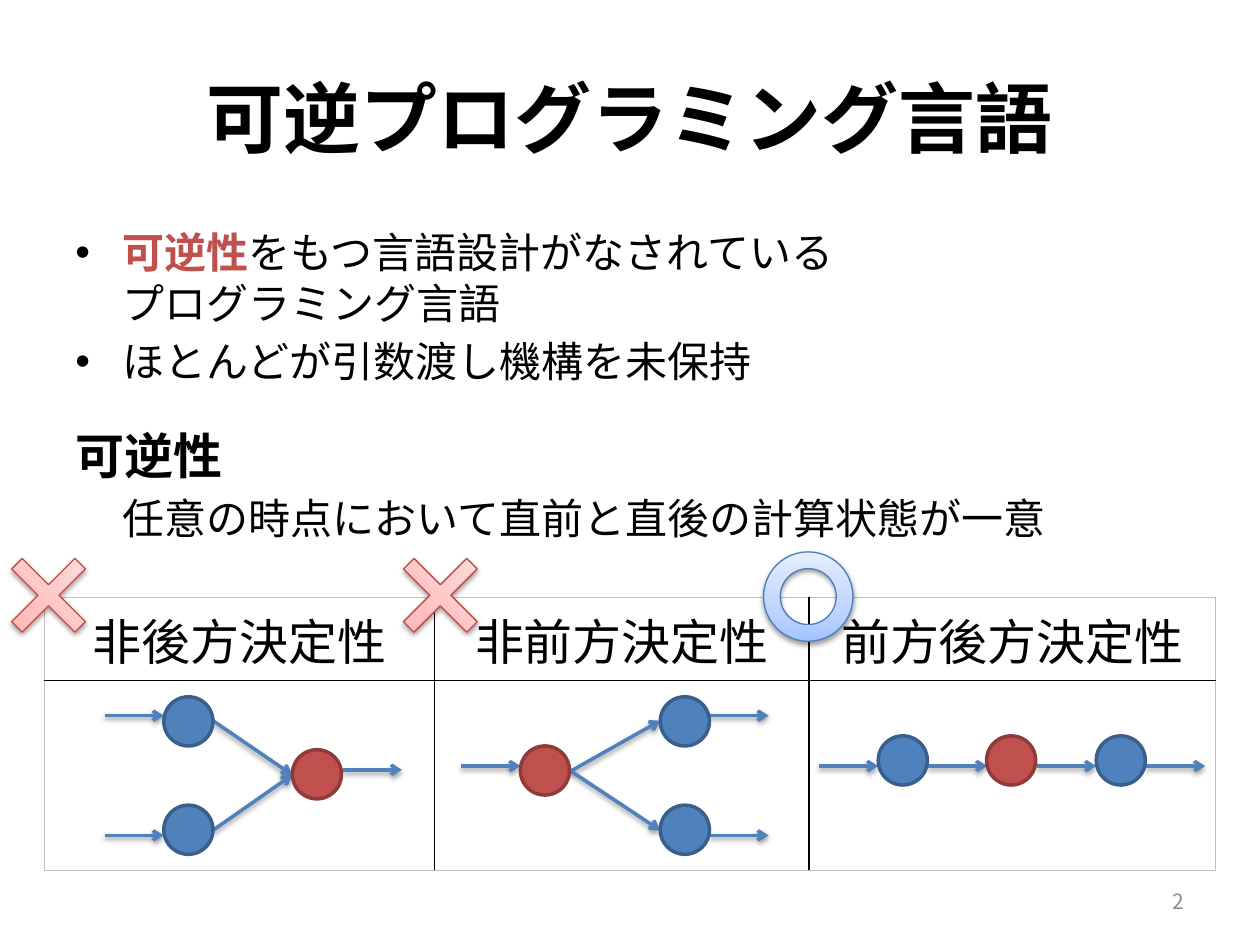
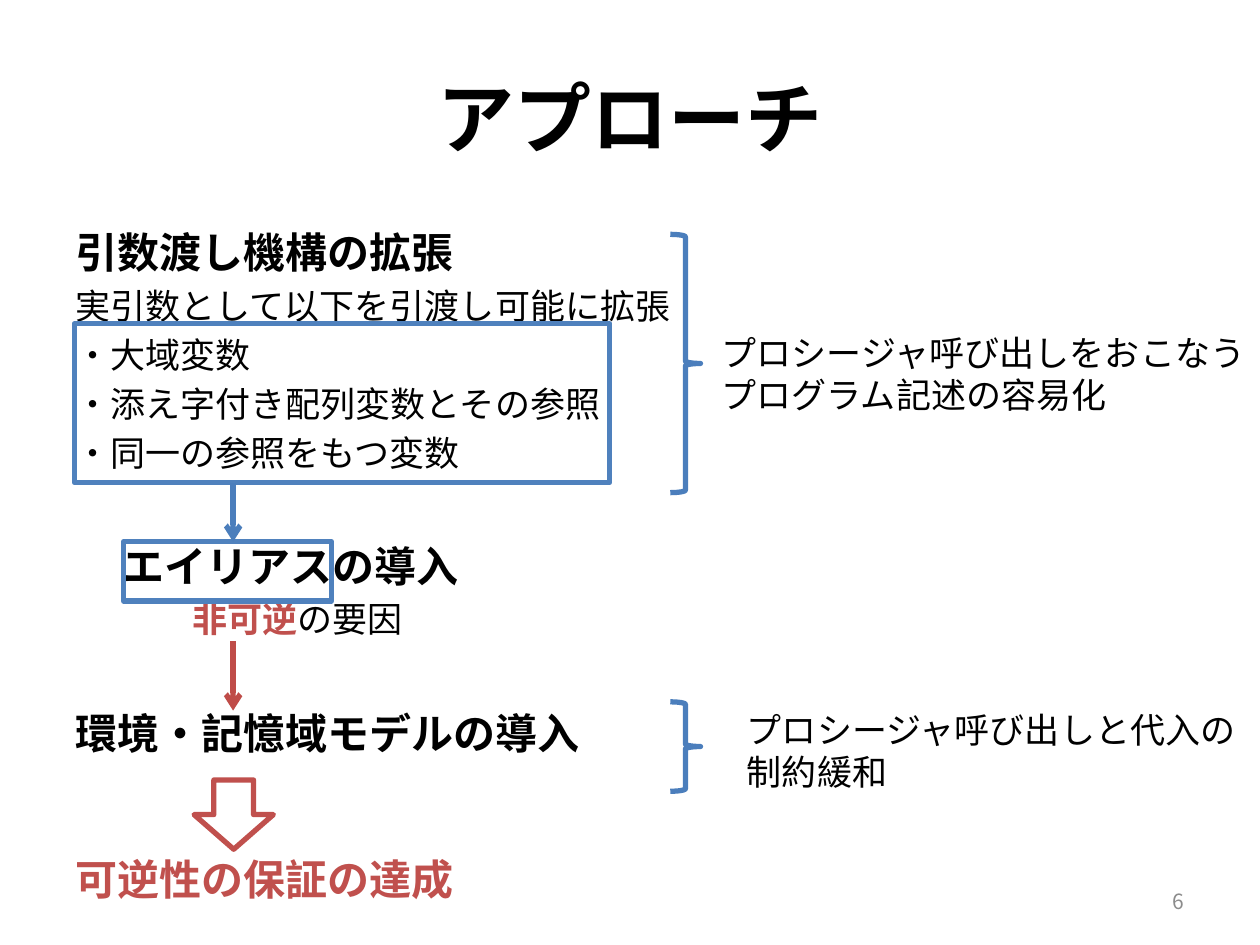
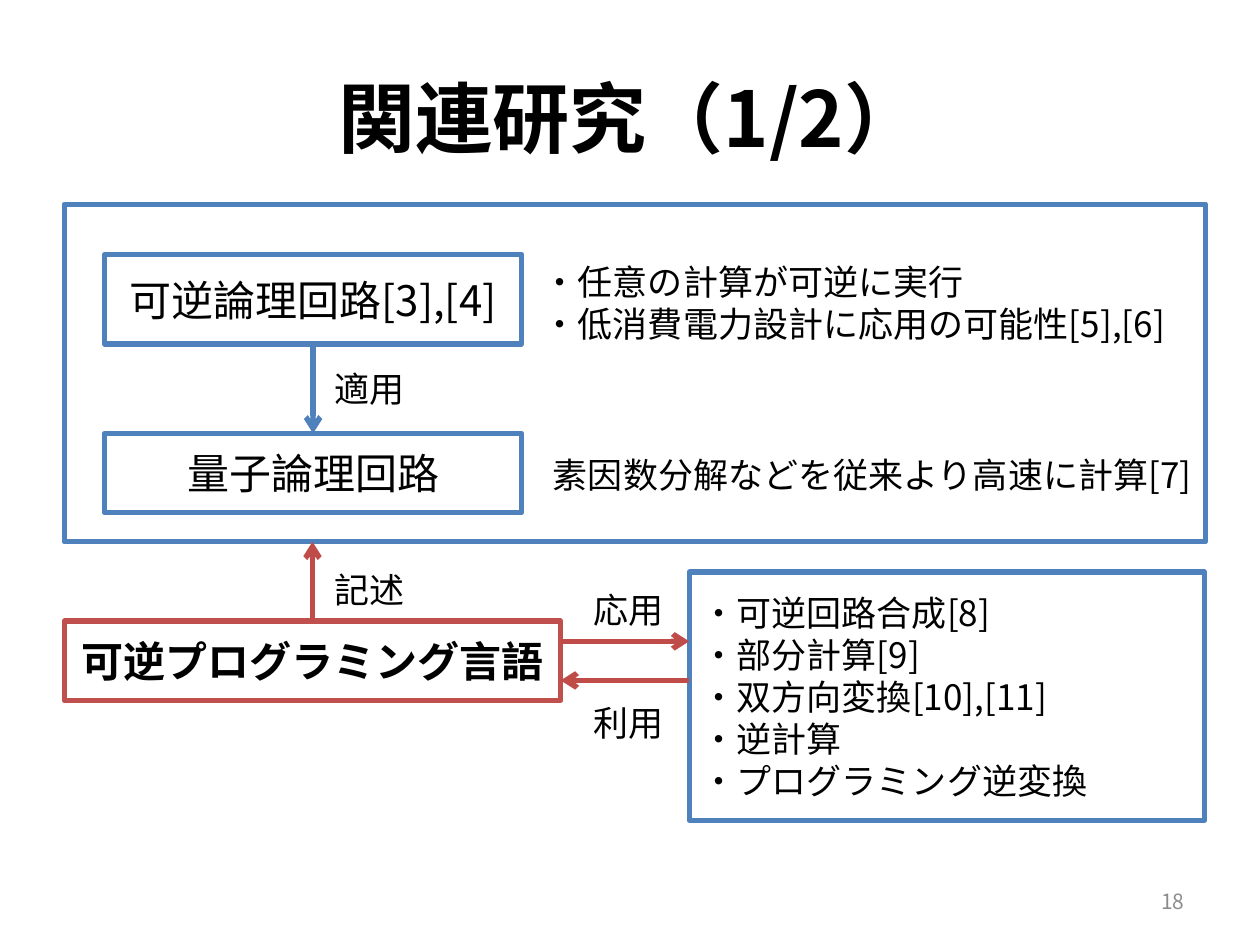
from copy import deepcopy
from dataclasses import dataclass

from lxml import etree
from pptx import Presentation
from pptx.dml.color import RGBColor
from pptx.enum import shapes, text
from pptx.oxml import ns
from pptx import util as u

COLUMNS, ROWS = 100, 75
WIDTH, HEIGHT = u.Inches(10), u.Inches(7.5)
FONT = "Noto Sans CJK JP"
BLACK, WHITE, GREY, BORDER = "000000", "FFFFFF", "8C8C8C", "BFBFBF"
BLUE, BLUE_EDGE, BLUE_LINE = "4F81BD", "3A5F8C", "4B7EBC"
RED, RED_EDGE, RED_LINE = "C0504D", "8E3B39", "BF4C48"
RED_GLOW = ("FFA6A5", "FFC0BF", "FFE7E7")
BLUE_GLOW = ("A4C4FF", "BFD4FF", "E6EEFF")
LEFT, CENTER, RIGHT = text.PP_ALIGN.LEFT, text.PP_ALIGN.CENTER, text.PP_ALIGN.RIGHT
SHAPE = shapes.MSO_SHAPE
NODE, STUB = 3.9, 4.7


@dataclass
class Line:
    """One paragraph, with an optional red bold lead and spacing before it."""
    words: str
    size: int = 24
    bold: bool = False
    colour: str = BLACK
    lead: str = ""
    indent: float = 0
    before: float = 0
    bullet: bool = False


def rgb(value):
    """Turn a hex string into a colour."""
    return RGBColor.from_string(value)


def across(columns):
    """Length of a number of grid columns."""
    return round(WIDTH * columns / COLUMNS)


def down(rows):
    """Length of a number of grid rows."""
    return round(HEIGHT * rows / ROWS)


def place(x, y, w, h):
    """Grid cells as left, top, width and height."""
    return across(x), down(y), across(w), down(h)


def child(parent, tag, **attributes):
    """Append a drawing element with attributes."""
    element = etree.SubElement(parent, ns.qn(f"a:{tag}"))
    for key, value in attributes.items():
        element.set(key, str(value))
    return element


def solid(parent, colour):
    """Append a solid fill to an element."""
    child(child(parent, "solidFill"), "srgbClr", val=colour)


def style_run(run, size, bold, colour):
    """Set font, size, weight and colour of a run."""
    run.font.name, run.font.size, run.font.bold = FONT, u.Pt(size), bold
    run.font.color.rgb = rgb(colour)
    child(run._r.get_or_add_rPr(), "ea", typeface=FONT)


def write(frame, lines, align=LEFT, anchor=text.MSO_ANCHOR.TOP, wrap=True):
    """Fill a text frame with lines."""
    frame.word_wrap, frame.vertical_anchor = wrap, anchor
    for number, line in enumerate(lines):
        paragraph = frame.add_paragraph() if number else frame.paragraphs[0]
        paragraph.alignment, paragraph.space_before = align, u.Pt(line.before)
        if line.lead:
            lead = paragraph.add_run()
            lead.text = line.lead
            style_run(lead, line.size, True, RED)
        for row, words in enumerate(line.words.split("\n")):
            if row:
                paragraph.add_line_break()
            run = paragraph.add_run()
            run.text = words
            style_run(run, line.size, line.bold, line.colour)
        properties = paragraph._p.get_or_add_pPr()
        properties.set("marL", str(across(line.indent)))
        properties.set("indent", str(-across(line.indent) if line.bullet else 0))
        if line.bullet:
            child(child(properties, "buClr"), "srgbClr", val=BLACK)
            child(properties, "buFont", typeface="Arial")
            child(properties, "buChar", char="•")


def textbox(slide, area, lines, **layout):
    """Add a text box on the grid."""
    write(slide.shapes.add_textbox(*place(*area)).text_frame, lines, **layout)


def note(slide, x, y, w, *rows):
    """Add 20 point side text that does not wrap."""
    textbox(slide, (x, y, w, 1 + 3.4 * len(rows)),
            [Line(row, 20) for row in rows], wrap=False)


def drop_shadow(effects):
    """Put a soft shadow below."""
    shadow = child(effects, "outerShdw", blurRad=u.Pt(3.1), dist=u.Pt(1.6),
                   dir=5400000, rotWithShape=0)
    child(child(shadow, "srgbClr", val=BLACK), "alpha", val=38000)


def figure(slide, kind, area, edge, fill=None, weight=3):
    """Add a preset shape with an outline and an optional fill."""
    shape = slide.shapes.add_shape(kind, *place(*area))
    shape.shadow.inherit = False
    shape.line.color.rgb, shape.line.width = rgb(edge), u.Pt(weight)
    if fill:
        shape.fill.solid()
        shape.fill.fore_color.rgb = rgb(fill)
    else:
        shape.fill.background()
    return shape


def panel(slide, area, edge, lines=(), align=CENTER):
    """Add a white framed rectangle with text."""
    box = figure(slide, SHAPE.RECTANGLE, area, edge, WHITE)
    write(box.text_frame, lines, align, text.MSO_ANCHOR.MIDDLE)
    return box


def verdict(slide, kind, x, y, edge, glow, ratio, turn=0):
    """Add a glowing mark that judges a table column."""
    mark = figure(slide, kind, (x, y, 7.1, 7.1), edge, weight=0.75)
    mark.adjustments[0], mark.rotation = ratio, turn
    mark.fill.gradient()
    mark.fill.gradient_angle = 90
    properties = mark._element.spPr
    stops = properties.find(".//" + ns.qn("a:gsLst"))
    stops.insert(1, deepcopy(stops[0]))
    for stop, colour, position in zip(mark.fill.gradient_stops, glow, (0, 0.35, 1)):
        stop.color.rgb, stop.position = rgb(colour), position
    drop_shadow(properties.find(ns.qn("a:effectLst")))


def arrow(slide, start, end, colour, weight=3, shadowed=False):
    """Add a straight arrow between two grid points."""
    (x1, y1), (x2, y2) = start, end
    line = slide.shapes.add_connector(shapes.MSO_CONNECTOR.STRAIGHT,
                                      across(x1), down(y1), across(x2), down(y2))
    line.line.color.rgb, line.line.width = rgb(colour), u.Pt(weight)
    child(line.line._get_or_add_ln(), "tailEnd", type="arrow")
    effects = child(line._element.spPr, "effectLst")
    if shadowed:
        drop_shadow(effects)
    return line


def step(slide, start, end):
    """Add a shadowed transition arrow."""
    arrow(slide, start, end, BLUE, 2, True)


def new_slide(deck, title, number):
    """Add a blank slide with title and page number."""
    slide = deck.slides.add_slide(deck.slide_layouts[6])
    middle = text.MSO_ANCHOR.MIDDLE
    textbox(slide, (5, 3, 90, 12.5), [Line(title, 44, True)], align=CENTER, anchor=middle)
    textbox(slide, (71.7, 69.5, 23.3, 4), [Line(str(number), 12, colour=GREY)],
            align=RIGHT, anchor=middle)
    return slide


def determinism_table(slide, headings):
    """Add the table with one column for each kind of determinism."""
    table = slide.shapes.add_table(2, 3, *place(3.5, 47.4, 93, 21.7)).table
    table.first_row = table.horz_banding = False
    for column, width in zip(table.columns, (31, 29.7, 32.3)):
        column.width = across(width)
    for row, height in zip(table.rows, (6.6, 15.1)):
        row.height = down(height)
    for number, heading in enumerate(headings):
        write(table.cell(0, number).text_frame, [Line(heading, 28)], CENTER)
        for row in range(2):
            cell = table.cell(row, number)
            cell.vertical_anchor = text.MSO_ANCHOR.MIDDLE
            properties = cell._tc.get_or_add_tcPr()
            inner = {"lnL": number > 0, "lnR": number < 2, "lnT": row > 0, "lnB": row < 1}
            for side, is_inner in inner.items():
                border = child(properties, side, w=u.Pt(1 if is_inner else 0.75))
                solid(border, BLACK if is_inner else BORDER)
            cell.fill.background()


def language_slide(deck):
    """Reversible languages and determinism."""
    slide = new_slide(deck, "可逆プログラミング言語", 2)
    textbox(slide, (5, 17.5, 90, 49.5), [
        Line("をもつ言語設計がなされている\nプログラミング言語", lead="可逆性",
             indent=3.75, before=4.8, bullet=True),
        Line("ほとんどが引数渡し機構を未保持", indent=3.75, before=4.8, bullet=True),
        Line("可逆性", 28, True, before=22.4),
        Line("任意の時点において直前と直後の計算状態が一意", indent=3.75, before=4.8)])
    determinism_table(slide, ("非後方決定性", "非前方決定性", "前方後方決定性"))

    for y in (57.2, 65.9):
        step(slide, (16.9, y), (23.2, 61.5))
        step(slide, (45.3, 61.2), (52.4, y))
    stubs = [(x, y) for x in (8.3, 56.3) for y in (56.8, 66.3)]
    stubs += [(27.2, 61.1), (36.6, 60.8)]
    stubs += [(65 + 8.65 * place_in_chain, 60.8) for place_in_chain in range(4)]
    for x, y in stubs:
        step(slide, (x, y), (x + STUB, y))

    states = [(x, y, BLUE, BLUE_EDGE) for x in (13, 52.4) for y in (55.3, 63.9)]
    states += [(x, 58.4, BLUE, BLUE_EDGE) for x in (69.7, 87)]
    states += [(x, y, RED, RED_EDGE) for x, y in ((23.2, 59.5), (41.3, 59.2), (78.3, 58.4))]
    for x, y, fill, edge in states:
        figure(slide, SHAPE.OVAL, (x, y, NODE, NODE), edge, fill, 2)

    for x in (0.3, 31.4):
        verdict(slide, SHAPE.CROSS, x, 43.7, RED_LINE, RED_GLOW, 0.417, 45)
    verdict(slide, SHAPE.DONUT, 60.6, 43.8, BLUE_LINE, BLUE_GLOW, 0.187)


def approach_slide(deck):
    """From wider argument passing to guaranteed reversibility."""
    slide = new_slide(deck, "アプローチ", 6)
    arguments = ("実引数として以下を引渡し可能に拡張", "・大域変数",
                 "・添え字付き配列変数とその参照", "・同一の参照をもつ変数")
    textbox(slide, (5, 17.5, 98.5, 57.5), [
        Line("引数渡し機構の拡張", bold=True, before=4.8),
        *[Line(argument, 20, before=4) for argument in arguments],
        Line("エイリアスの導入", bold=True, indent=3.75, before=38.4),
        Line("の要因", 20, lead="非可逆", indent=9.3, before=4),
        Line("環境・記憶域モデルの導入", bold=True, before=38.4),
        Line("可逆性の保証の達成", bold=True, colour=RED, before=55.2)])
    for framed in ((5.9, 25.7, 42.5, 12.6), (9.8, 43, 16.5, 4.7)):
        figure(slide, SHAPE.RECTANGLE, framed, BLUE)
    arrow(slide, (18.5, 38.3), (18.5, 43), BLUE_LINE)
    arrow(slide, (18.5, 50.9), (18.5, 56.4), RED_LINE)
    figure(slide, SHAPE.DOWN_ARROW, (15.4, 61.9, 6.3, 5.5), RED, WHITE)
    for top, height in ((18.6, 20.5), (55.7, 7.1)):
        figure(slide, SHAPE.RIGHT_BRACE, (53.2, top, 2.4, height), BLUE_LINE)
    note(slide, 56.3, 25.8, 44.1, "プロシージャ呼び出しをおこなう", "プログラム記述の容易化")
    note(slide, 58.3, 55.7, 41.3, "プロシージャ呼び出しと代入の", "制約緩和")


def related_slide(deck):
    """How reversible languages relate to other fields."""
    slide = new_slide(deck, "関連研究（1/2）", 18)
    figure(slide, SHAPE.RECTANGLE, (5.1, 16.2, 90.6, 26.8), BLUE)
    reversible = panel(slide, (8.3, 20.2, 33.1, 7.1), BLUE, [Line("可逆論理回路[3],[4]")])
    quantum = panel(slide, (8.3, 34.4, 33.1, 6.3), BLUE, [Line("量子論理回路")])
    language = panel(slide, (5.1, 49.3, 39.4, 6.3), RED,
                     [Line("可逆プログラミング言語", bold=True)])
    fields = ("・可逆回路合成[8]", "・部分計算[9]", "・双方向変換[10],[11]",
              "・逆計算", "・プログラミング逆変換")
    panel(slide, (54.7, 45.4, 40.9, 19.7), BLUE, [Line(field, 20) for field in fields], LEFT)

    applied = arrow(slide, (24.8, 27.3), (24.8, 34.4), BLUE)
    applied.begin_connect(reversible, 2)
    applied.end_connect(quantum, 0)
    described = arrow(slide, (24.8, 49.3), (24.8, 43), RED_LINE)
    described.begin_connect(language, 0)
    arrow(slide, (44.5, 50.9), (54.7, 50.9), RED_LINE)
    arrow(slide, (54.7, 54), (44.5, 54), RED_LINE)

    for x, y, relation in ((25.6, 28.7, "適用"), (25.6, 44.6, "記述"),
                           (46.1, 46.2, "応用"), (46.1, 55.2, "利用")):
        note(slide, x, y, 7.6, relation)
    note(slide, 42.1, 20.2, 55.9, "・任意の計算が可逆に実行",
         "・低消費電力設計に応用の可能性[5],[6]")
    note(slide, 42.9, 35.5, 53.5, "素因数分解などを従来より高速に計算[7]")


def main():
    """Build the deck."""
    deck = Presentation()
    deck.slide_width, deck.slide_height = WIDTH, HEIGHT
    language_slide(deck)
    approach_slide(deck)
    related_slide(deck)
    deck.save("out.pptx")


if __name__ == "__main__":
    main()
